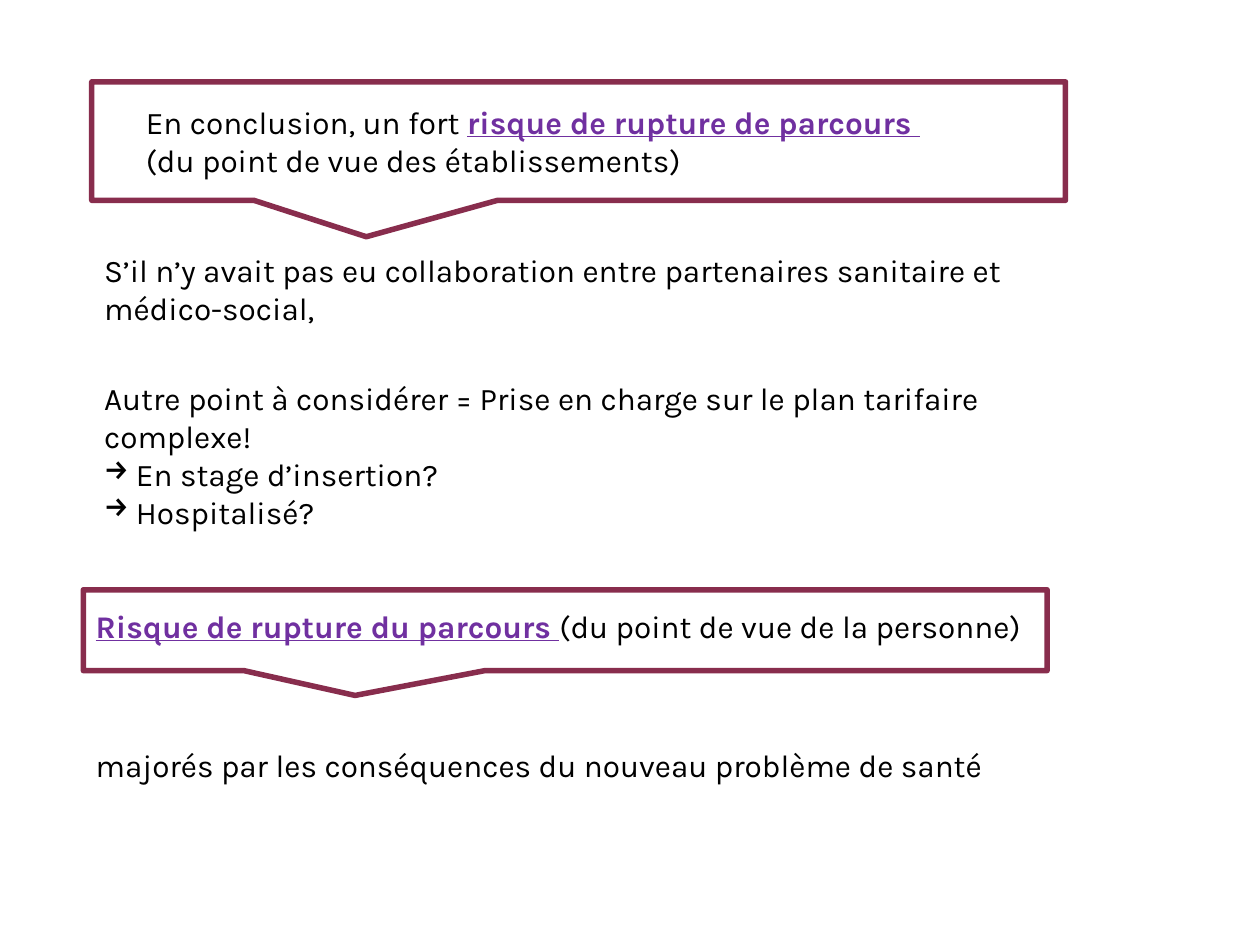
from lxml.etree import SubElement
from pptx import Presentation
from pptx.dml.color import RGBColor
from pptx.enum.shapes import MSO_SHAPE
from pptx.enum.text import MSO_AUTO_SIZE
from pptx.oxml.ns import qn
from pptx.util import Cm, Pt

THEME = {
    "font": "Karla",
    "size": Pt(18),
    "text": RGBColor(0x00, 0x00, 0x00),
    "accent": RGBColor(0x70, 0x30, 0xA0),
    "frame": RGBColor(0x88, 0x2D, 0x4D),
    "frame_width": Pt(3.15),
    "bullet_indent": Cm(0.64),
}

# Callout frames: left, top, width, height in cm
CALLOUTS = [
    (1.85, 1.65, 19.63, 2.39),
    (1.68, 11.89, 19.43, 1.63),
]
POINTER = (-0.218, 0.807)

# Text boxes: position in cm, then paragraphs
# *marked* parts are emphasised, a leading arrow makes a bullet
TEXTS = [
    ((2.69, 1.96, 17.2, 1.8), [
        "En conclusion, un fort *risque de rupture de parcours *",
        "(du point de vue des établissements)",
    ]),
    ((1.85, 4.93, 20.75, 1.8), [
        "S’il n’y avait pas eu collaboration entre partenaires sanitaire et médico-social,",
    ]),
    ((1.85, 7.52, 20.65, 3.33), [
        "Autre point à considérer = Prise en charge sur le plan tarifaire complexe!",
        "→En stage d’insertion?",
        "→Hospitalisé?",
    ]),
    ((1.68, 12.12, 19.43, 1.02), [
        "*Risque de rupture du parcours *(du point de vue de la personne)",
    ]),
    ((1.68, 14.91, 20.65, 1.02), [
        "majorés par les conséquences du nouveau problème de santé",
    ]),
]


def add_callout(s, box):
    sp = s.shapes.add_shape(MSO_SHAPE.RECTANGULAR_CALLOUT, *map(Cm, box))
    sp.adjustments[0], sp.adjustments[1] = POINTER
    sp.shadow.inherit = False
    sp.fill.background()
    sp.line.color.rgb = THEME["frame"]
    sp.line.width = THEME["frame_width"]


def add_bullet(p, char):
    pPr = p._p.get_or_add_pPr()
    pPr.set("marL", str(THEME["bullet_indent"]))
    pPr.set("indent", str(-THEME["bullet_indent"]))
    SubElement(pPr, qn("a:buChar")).set("char", char)


def add_runs(p, text):
    for i, part in enumerate(text.split("*")):
        if not part:
            continue
        strong = i % 2 == 1
        r = p.add_run()
        r.text = part
        r.font.name = THEME["font"]
        r.font.size = THEME["size"]
        r.font.bold = r.font.underline = strong
        r.font.color.rgb = THEME["accent" if strong else "text"]


def add_text(s, box, paragraphs):
    tf = s.shapes.add_textbox(*map(Cm, box)).text_frame
    tf.word_wrap = True
    tf.auto_size = MSO_AUTO_SIZE.SHAPE_TO_FIT_TEXT
    for i, text in enumerate(paragraphs):
        p = tf.add_paragraph() if i else tf.paragraphs[0]
        if text.startswith("→"):
            add_bullet(p, "→")
        add_runs(p, text.lstrip("→"))


def main():
    prs = Presentation()
    prs.slide_width, prs.slide_height = Cm(25.4), Cm(19.05)
    s = prs.slides.add_slide(prs.slide_layouts[6])

    # Frames behind, text in front
    for box in CALLOUTS:
        add_callout(s, box)
    for box, paragraphs in TEXTS:
        add_text(s, box, paragraphs)

    prs.save("out.pptx")


if __name__ == "__main__":
    main()
